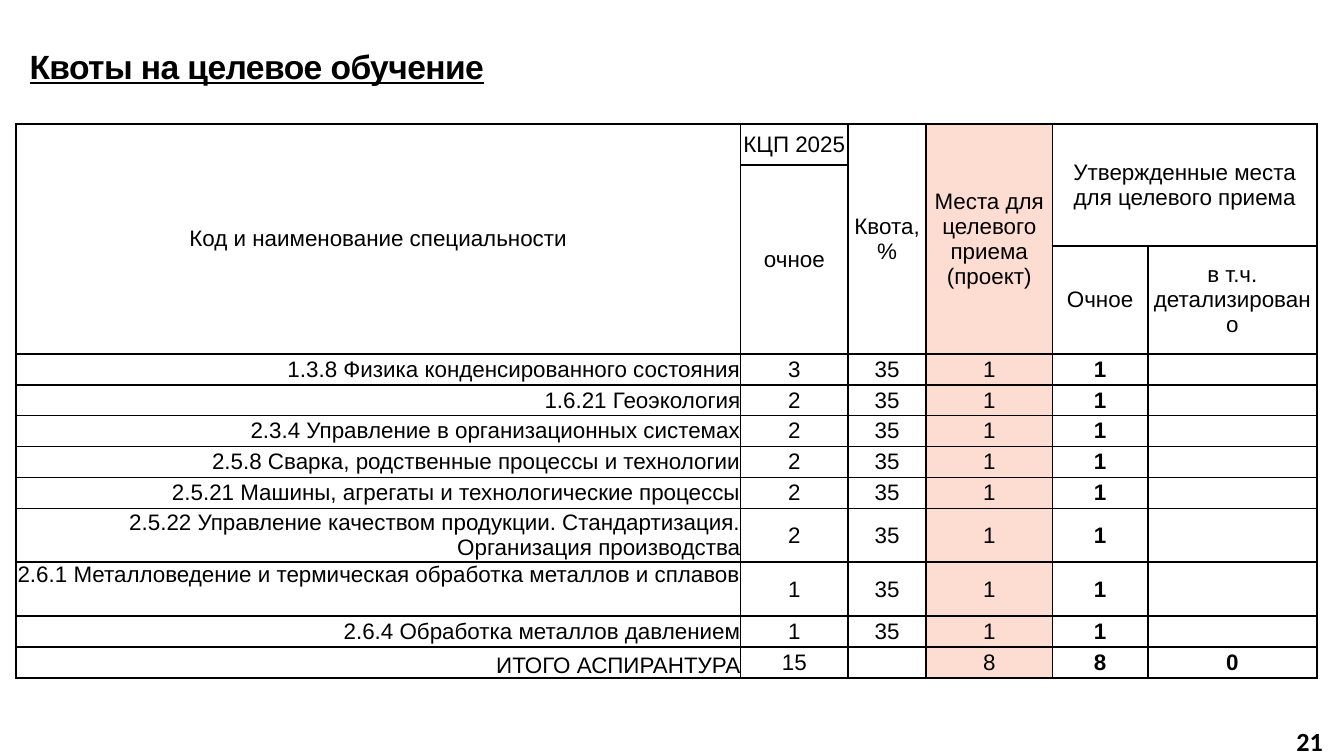
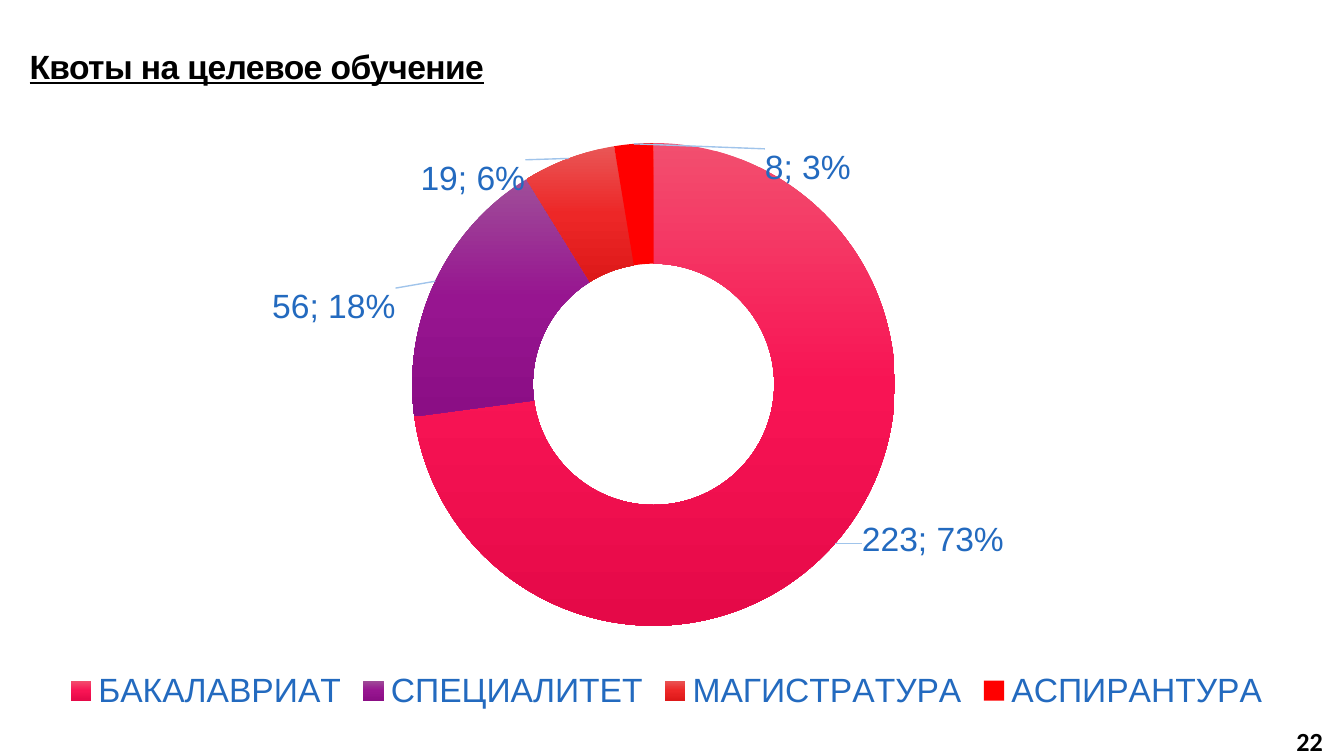
"""Build two slides on admission quotas: a table and a ring chart."""
from dataclasses import dataclass
from typing import Any, NamedTuple

from pptx import Presentation
from pptx.chart.data import CategoryChartData
from pptx.dml.color import RGBColor
from pptx.enum.chart import XL_CHART_TYPE, XL_LEGEND_POSITION
from pptx.enum.text import MSO_ANCHOR, MSO_AUTO_SIZE, PP_ALIGN
from pptx.oxml import parse_xml
from pptx.oxml.ns import nsdecls
from pptx.util import Pt


@dataclass(frozen=True)
class Theme:
    """Colours, fonts and type sizes of the deck."""
    ink: str = "000000"
    label: str = "236ABF"
    leader: str = "A0C4EB"
    paper: str = "FFFFFF"
    accent: str = "FDDCD2"
    face: str = "Arial"
    number_face: str = "Calibri"
    title: int = 18
    chart: int = 18
    number: int = 14
    table: int = 12


class Box(NamedTuple):
    """A frame in points."""
    left: float
    top: float
    width: float
    height: float

    def points(self) -> list[int]:
        """Return the frame as lengths."""
        return [Pt(side) for side in self]


class Head(NamedTuple):
    """A heading cell and the last cell it spans."""
    row: int
    col: int
    last_row: int
    last_col: int
    text: str


class Course(NamedTuple):
    """A table line for one specialty."""
    name: str
    plan: str
    quota: str = "35"
    draft: str = "1"
    places: str = "1"
    detail: str = ""
    height: float = 16.56
    anchor: Any = MSO_ANCHOR.MIDDLE


class Slice(NamedTuple):
    """A ring slice with its fill stops and label shift."""
    name: str
    count: int
    stops: tuple[str, ...]
    shift: tuple[float, float]


THEME = Theme()
TITLE = Box(8.64, 20.88, 673.92, 28.8)
NUMBER = Box(683.28, 385.2, 36.72, 20.88)
TABLE = Box(8.64, 66.4, 696.96, 297)
CHART = Box(8.64, 60.48, 696.96, 323.28)

WIDTHS = [388.1, 57.6, 41.8, 67.7, 51.1, 90.7]
HEAD_HEIGHTS = [22, 43.4, 57.8]
TALL = 28.9
DRAFT_COL, PLACE_COL = 3, 4

HEADS = [
    Head(0, 0, 2, 0, "Код и наименование специальности"),
    Head(0, 1, 0, 1, "КЦП 2025"),
    Head(1, 1, 2, 1, "очное"),
    Head(0, 2, 2, 2, "Квота, %"),
    Head(0, 3, 2, 3, "Места для целевого приема (проект)"),
    Head(0, 4, 1, 5, "Утвержденные места для целевого приема"),
    Head(2, 4, 2, 4, "Очное"),
    Head(2, 5, 2, 5, "в т.ч. детализировано"),
]
COURSES = [
    Course("1.3.8 Физика конденсированного состояния", "3"),
    Course("1.6.21 Геоэкология", "2"),
    Course("2.3.4 Управление в организационных системах", "2"),
    Course("2.5.8 Сварка, родственные процессы и технологии", "2"),
    Course("2.5.21 Машины, агрегаты и технологические процессы", "2"),
    Course("2.5.22 Управление качеством продукции. Стандартизация. "
           "Организация производства", "2", height=TALL),
    Course("2.6.1 Металловедение и термическая обработка металлов и сплавов",
           "1", height=TALL, anchor=MSO_ANCHOR.TOP),
    Course("2.6.4 Обработка металлов давлением", "1"),
    Course("ИТОГО АСПИРАНТУРА", "15", "", "8", "8", "0",
           anchor=MSO_ANCHOR.BOTTOM),
]
SLICES = [
    Slice("БАКАЛАВРИАТ", 223, ("F24F6F", "F81454", "E50948"), (0.11, 0.06)),
    Slice("СПЕЦИАЛИТЕТ", 56, ("9F4E99", "971590", "8B0E85"), (-0.12, 0)),
    Slice("МАГИСТРАТУРА", 19, ("E95656", "ED2727", "DD1919"), (-0.09, -0.06)),
    Slice("АСПИРАНТУРА", 8, ("FF0000",), (0.13, -0.06)),
]


def style(font: Any, size: int, color: str = THEME.ink,
          face: str = THEME.face) -> None:
    """Set the size, colour and face of a font."""
    font.size = Pt(size)
    font.name = face
    font.color.rgb = RGBColor.from_string(color)


def write(frame: Any, text: str, *, size: int, face: str = THEME.face,
          bold: bool = False, line: bool = False, spacing: int = 0,
          align: Any = PP_ALIGN.CENTER) -> None:
    """Write one formatted paragraph into a text frame."""
    frame.word_wrap = True
    para = frame.paragraphs[0]
    para.alignment = align
    run = para.add_run()
    run.text = text
    style(run.font, size, face=face)
    run.font.bold = bold
    run.font.underline = line
    if spacing:
        run._r.get_or_add_rPr().set("spc", str(spacing))


def add_page(deck: Any, number: int) -> Any:
    """Add a slide with the shared title and number."""
    page = deck.slides.add_slide(deck.slide_layouts[5])
    page.background.fill.solid()
    page.background.fill.fore_color.rgb = RGBColor.from_string(THEME.paper)
    title = page.shapes.title
    title.left, title.top, title.width, title.height = TITLE.points()
    frame = title.text_frame
    frame.auto_size = MSO_AUTO_SIZE.NONE
    frame.vertical_anchor = MSO_ANCHOR.TOP
    write(frame, "Квоты на целевое обучение", size=THEME.title, bold=True,
          line=True, spacing=-30, align=PP_ALIGN.LEFT)
    corner = page.shapes.add_textbox(*NUMBER.points())
    write(corner.text_frame, str(number), size=THEME.number,
          face=THEME.number_face, bold=True)
    return page


def frame_cell(cell: Any, shaded: bool) -> None:
    """Set the fill, margins and borders of a cell."""
    cell.margin_left = cell.margin_right = 0
    cell.margin_top = cell.margin_bottom = 0
    cell.vertical_anchor = MSO_ANCHOR.MIDDLE
    if shaded:
        cell.fill.solid()
        cell.fill.fore_color.rgb = RGBColor.from_string(THEME.accent)
    else:
        cell.fill.background()
    props = cell._tc.get_or_add_tcPr()
    for place, side in enumerate("LRTB"):
        props.insert(place, parse_xml(
            f'<a:ln{side} {nsdecls("a")} w="{Pt(1)}"><a:solidFill>'
            f'<a:srgbClr val="{THEME.ink}"/></a:solidFill></a:ln{side}>'))
    end = cell.text_frame.paragraphs[0]._p.get_or_add_endParaRPr()
    end.set("sz", str(THEME.table * 100))


def add_quotas(page: Any) -> None:
    """Draw the table of specialties."""
    heights = HEAD_HEIGHTS + [course.height for course in COURSES]
    table = page.shapes.add_table(
        len(heights), len(WIDTHS), *TABLE.points()).table
    table.first_row = table.horz_banding = False
    for col, width in zip(table.columns, WIDTHS):
        col.width = Pt(width)
    for row, height in zip(table.rows, heights):
        row.height = Pt(height)
        for col, cell in enumerate(row.cells):
            frame_cell(cell, col == DRAFT_COL)
    for head in HEADS:
        cell = table.cell(head.row, head.col)
        if (head.row, head.col) != (head.last_row, head.last_col):
            cell.merge(table.cell(head.last_row, head.last_col))
        write(cell.text_frame, head.text, size=THEME.table)
    for row, course in enumerate(COURSES, len(HEAD_HEIGHTS)):
        table.cell(row, 0).vertical_anchor = course.anchor
        for col, text in enumerate(course[:len(WIDTHS)]):
            if text:
                write(table.cell(row, col).text_frame, text,
                      size=THEME.table, bold=col >= PLACE_COL,
                      align=PP_ALIGN.CENTER if col else PP_ALIGN.RIGHT)


def shade(point: Any, node: Any, stops: tuple[str, ...]) -> None:
    """Fill a ring slice with one colour or a gradient."""
    point.format.line.fill.background()
    fill = point.format.fill
    fill.solid()
    fill.fore_color.rgb = RGBColor.from_string(stops[0])
    if len(stops) > 1:
        step = 100000 // (len(stops) - 1)
        marks = "".join(
            f'<a:gs pos="{i * step}"><a:srgbClr val="{color}"/></a:gs>'
            for i, color in enumerate(stops))
        solid = node.xpath("c:dPt/c:spPr/a:solidFill")[-1]
        solid.getparent().replace(solid, parse_xml(
            f'<a:gradFill {nsdecls("a")} rotWithShape="1">'
            f'<a:gsLst>{marks}</a:gsLst>'
            '<a:lin ang="5400000" scaled="0"/></a:gradFill>'))


def make_labels() -> Any:
    """Return the slice labels with leader lines."""
    text = (f'<c:txPr><a:bodyPr/><a:p><a:pPr><a:defRPr sz="{THEME.chart}00" '
            f'b="0"><a:solidFill><a:srgbClr val="{THEME.label}"/>'
            f'</a:solidFill><a:latin typeface="{THEME.face}"/></a:defRPr>'
            '</a:pPr><a:endParaRPr lang="ru-RU"/></a:p></c:txPr>')
    shown = {"LegendKey": 0, "Val": 1, "CatName": 0, "SerName": 0,
             "Percent": 1, "BubbleSize": 0}
    flags = "".join(f'<c:show{key} val="{on}"/>' for key, on in shown.items())
    common = f'{text}{flags}<c:separator>; </c:separator>'
    single = "".join(
        f'<c:dLbl><c:idx val="{i}"/><c:layout><c:manualLayout>'
        f'<c:x val="{part.shift[0]}"/><c:y val="{part.shift[1]}"/>'
        f'</c:manualLayout></c:layout>{common}</c:dLbl>'
        for i, part in enumerate(SLICES))
    return parse_xml(
        f'<c:dLbls {nsdecls("c", "a")}>{single}{common}'
        '<c:showLeaderLines val="1"/><c:leaderLines><c:spPr>'
        f'<a:ln w="{Pt(0.75)}"><a:solidFill><a:srgbClr val="{THEME.leader}"/>'
        '</a:solidFill></a:ln></c:spPr></c:leaderLines></c:dLbls>')


def add_ring(page: Any) -> None:
    """Draw the ring chart of places by level."""
    data = CategoryChartData()
    data.categories = [part.name for part in SLICES]
    data.add_series("Series 1", [part.count for part in SLICES])
    chart = page.shapes.add_chart(
        XL_CHART_TYPE.DOUGHNUT, *CHART.points(), data).chart
    chart.has_title = False
    style(chart.font, THEME.chart)
    chart.has_legend = True
    chart.legend.position = XL_LEGEND_POSITION.BOTTOM
    chart.legend.include_in_layout = False
    style(chart.legend.font, THEME.chart, THEME.label)
    plot = chart.plots[0]
    plot.vary_by_categories = True
    node = chart.element.xpath(".//c:ser")[0]
    for i, part in enumerate(SLICES):
        shade(plot.series[0].points[i], node, part.stops)
    node.xpath("c:cat")[0].addprevious(make_labels())
    chart.element.xpath(".//c:holeSize")[0].set("val", "75")
    area = chart.element.xpath(".//c:plotArea")[0]
    for old in area.xpath("c:layout"):
        area.remove(old)
    sides = zip("xywh", (0.25, 0.05, 0.48, 0.8))
    area.insert(0, parse_xml(
        f'<c:layout {nsdecls("c")}><c:manualLayout>'
        '<c:layoutTarget val="inner"/><c:xMode val="edge"/>'
        '<c:yMode val="edge"/>'
        + "".join(f'<c:{key} val="{size}"/>' for key, size in sides)
        + '</c:manualLayout></c:layout>'))


def main() -> None:
    """Build and save the deck."""
    deck = Presentation()
    deck.slide_width, deck.slide_height = Pt(720), Pt(405)
    for number, draw in enumerate((add_quotas, add_ring), 21):
        draw(add_page(deck, number))
    deck.save("out.pptx")


if __name__ == "__main__":
    main()
